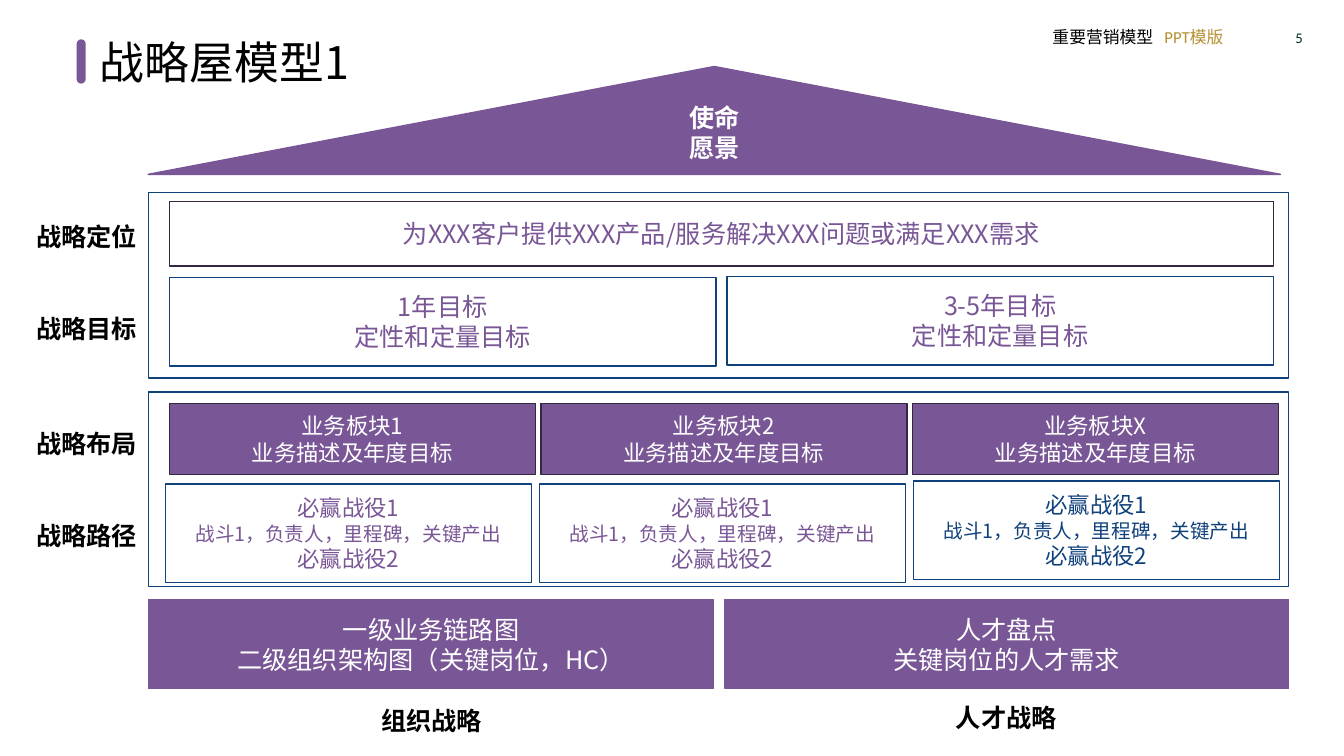
"""Build the strategy house slide: roof, framed strategy layers and two foundation blocks."""
from dataclasses import dataclass

from lxml import etree
from pptx import Presentation
from pptx import util as u
from pptx.dml.color import RGBColor
from pptx.enum import shapes, text
from pptx.oxml import ns


@dataclass(frozen=True)
class Theme:
    purple: str = "795696"
    navy: str = "0F417B"
    plum: str = "352642"
    gold: str = "B49132"
    green: str = "002E1A"
    white: str = "FFFFFF"
    black: str = "000000"
    font: str = "Noto Sans CJK SC"
    small_font: str = "Calibri"
    title: float = 32
    body: float = 18
    unit: float = 16
    detail: float = 14
    header: float = 12
    number: float = 10.5


theme = Theme()
CENTER, LEFT, RIGHT = text.PP_ALIGN.CENTER, text.PP_ALIGN.LEFT, text.PP_ALIGN.RIGHT
RECTANGLE = shapes.MSO_SHAPE.RECTANGLE


def write(shape, lines, color, align=CENTER, anchor=text.MSO_ANCHOR.MIDDLE,
          bold=False, font=theme.font, gap=0):
    """Fill a shape with paragraphs given as (words, size) pairs."""
    frame = shape.text_frame
    frame.word_wrap = True
    frame.auto_size = text.MSO_AUTO_SIZE.NONE
    frame.vertical_anchor = anchor
    for index, (words, size) in enumerate(lines):
        paragraph = frame.paragraphs[0] if index == 0 else frame.add_paragraph()
        paragraph.alignment = align
        if index:
            paragraph.space_before = u.Pt(gap)
        run = paragraph.add_run()
        run.text = words
        run.font.name, run.font.size, run.font.bold = font, u.Pt(size), bold
        run.font.color.rgb = RGBColor.from_string(color)
        east_asian = etree.SubElement(run.font._element, ns.qn("a:ea"))
        east_asian.set("typeface", theme.font)


def block(kind, box, fill, line):
    """Add a flat preset shape with a one-point outline."""
    shape = slide.shapes.add_shape(kind, *map(u.Inches, box))
    shape.shadow.inherit = False
    shape.fill.solid()
    shape.fill.fore_color.rgb = RGBColor.from_string(fill)
    shape.line.width = u.Pt(1)
    shape.line.color.rgb = RGBColor.from_string(line)
    return shape


presentation = Presentation()
presentation.slide_width, presentation.slide_height = u.Inches(13.33), u.Inches(7.5)
slide = presentation.slides.add_slide(presentation.slide_layouts[5])

title = slide.shapes.title
title.left, title.top, title.width, title.height = map(u.Inches, (0.89, 0.29, 6.67, 0.64))
write(title, [("战略屋模型1", theme.title)], theme.black, LEFT, text.MSO_ANCHOR.TOP)

accent = block(shapes.MSO_SHAPE.ROUNDED_RECTANGLE, (0.76, 0.39, 0.09, 0.44),
               theme.purple, theme.purple)
accent.adjustments[0] = 0.5
accent.line.fill.background()

header = slide.shapes.add_textbox(*map(u.Inches, (10.34, 0.22, 2.15, 0.3)))
write(header, [("重要营销模型\t", theme.header)], theme.black, LEFT,
      text.MSO_ANCHOR.TOP, font=theme.small_font)
header_paragraph = header.text_frame.paragraphs[0]
tabs = etree.SubElement(header_paragraph._p.get_or_add_pPr(), ns.qn("a:tabLst"))
etree.SubElement(tabs, ns.qn("a:tab"), pos=str(u.Inches(1.11)), algn="l")
template_run = header_paragraph.add_run()
template_run.text = "PPT模版"
template_run.font.name, template_run.font.size = theme.small_font, u.Pt(theme.header)
template_run.font.color.rgb = RGBColor.from_string(theme.gold)

page_number = slide.shapes.add_textbox(*map(u.Inches, (10.02, 0.17, 3, 0.4)))
write(page_number, [("5", theme.number)], theme.green, RIGHT, font=theme.small_font)

roof = block(shapes.MSO_SHAPE.ISOSCELES_TRIANGLE, (1.47, 0.66, 11.23, 1.07),
             theme.purple, theme.purple)
write(roof, [("使命", theme.body), ("愿景", theme.body)], theme.white, bold=True)
roof.text_frame.margin_bottom = u.Inches(0.35)

for top, height in ((1.91, 1.84), (3.89, 1.93)):
    block(RECTANGLE, (1.47, top, 11.31, height), theme.white, theme.navy)

positioning = block(RECTANGLE, (1.68, 2, 10.95, 0.64), theme.white, theme.plum)
write(positioning, [("为XXX客户提供XXX产品/服务解决XXX问题或满足XXX需求", theme.body)],
      theme.purple)

for left, top, period in ((1.68, 2.75, "1年目标"), (7.21, 2.74, "3-5年目标")):
    goal = block(RECTANGLE, (left, top, 5.42, 0.88), theme.white, theme.navy)
    write(goal, [(period, theme.body), ("定性和定量目标", theme.body)], theme.purple)

for column, name in enumerate("12X"):
    unit = block(RECTANGLE, (1.68 + column * 3.685, 4, 3.63, 0.71), theme.purple, theme.plum)
    write(unit, [(f"业务板块{name}", theme.unit), ("业务描述及年度目标", theme.unit)],
          theme.white)

battle_lines = [("必赢战役1", theme.unit), ("战斗1，负责人，里程碑，关键产出", theme.detail),
                ("必赢战役2", theme.unit)]
battles = ((4.8, theme.purple), (4.8, theme.purple), (4.77, theme.navy))
for column, (top, color) in enumerate(battles):
    battle = block(RECTANGLE, (1.64 + column * 3.71, top, 3.63, 0.98), theme.white, theme.navy)
    write(battle, battle_lines, color)

foundations = (
    (1.47, 5.61, ("一级业务链路图", "二级组织架构图（关键岗位，HC）"), (3.17, 6.95), "组织战略"),
    (7.19, 5.59, ("人才盘点", "关键岗位的人才需求"), (8.87, 6.92), "人才战略"),
)
for left, width, lines, caption_place, caption in foundations:
    foundation = block(RECTANGLE, (left, 5.95, width, 0.88), theme.purple, theme.purple)
    write(foundation, [(line, theme.body) for line in lines], theme.white)
    label = slide.shapes.add_textbox(*map(u.Inches, (*caption_place, 2.22, 0.4)))
    write(label, [(caption, theme.body)], theme.black, anchor=text.MSO_ANCHOR.TOP, bold=True)

for top, names in ((2.15, ("战略定位", "战略目标")), (4.2, ("战略布局", "战略路径"))):
    label = slide.shapes.add_textbox(*map(u.Inches, (0.26, top, 1.21, 1.31)))
    write(label, [(name, theme.body) for name in names], theme.black, LEFT,
          text.MSO_ANCHOR.TOP, bold=True, gap=44)

presentation.save("out.pptx")
